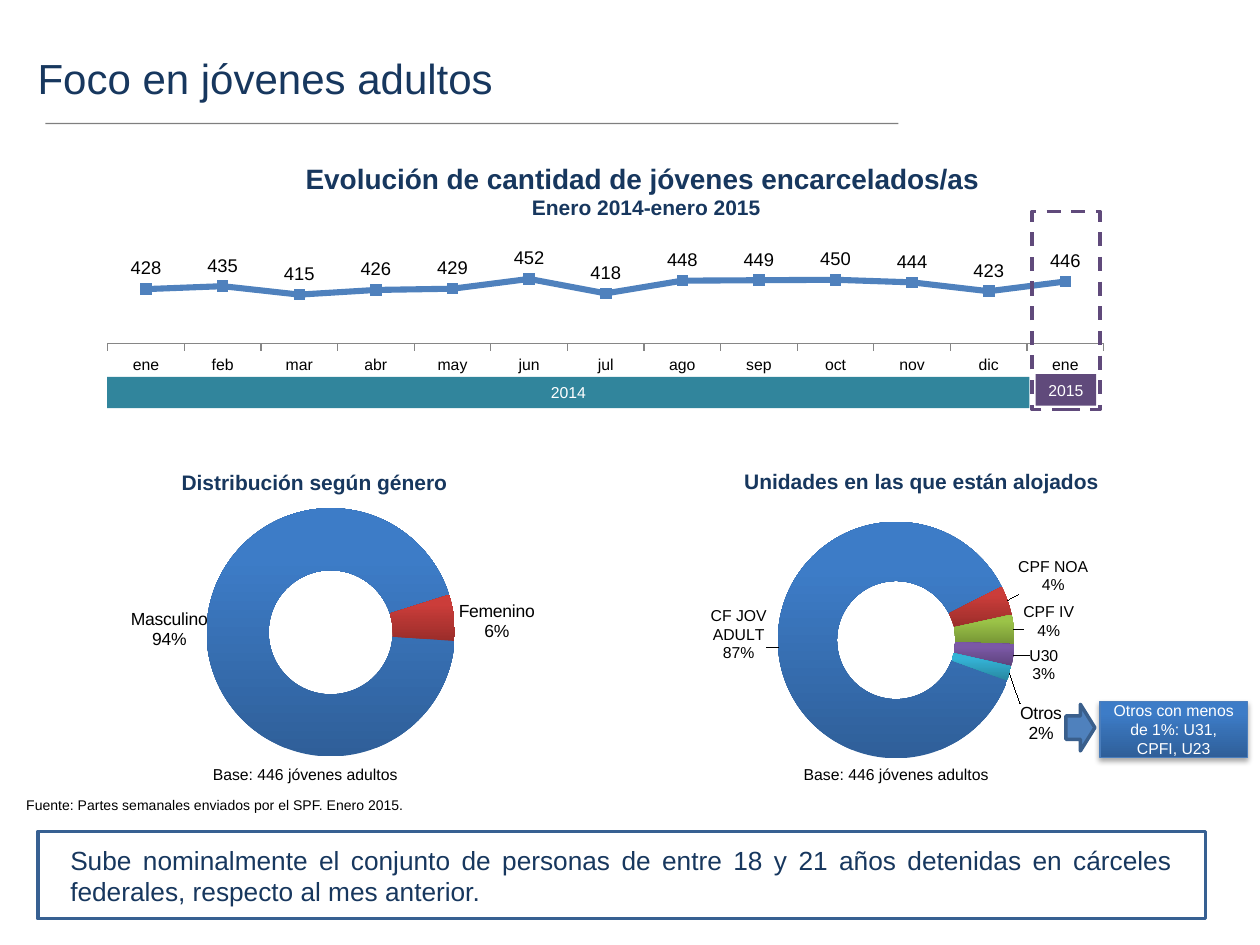
"""Build the slide on young adults in federal prisons."""
from lxml import etree
from pptx import Presentation
from pptx import util as u
from pptx.chart.data import CategoryChartData
from pptx.dml.color import RGBColor
from pptx.enum import chart as ch, dml, shapes, text
from pptx.oxml import parse_xml
from pptx.oxml.ns import nsdecls, qn

NAVY = "17375E"
BLUE = ("2F5F99", "3D7CC7")
KIND = shapes.MSO_SHAPE
ALIGN = text.PP_ALIGN


def rgb(code):
    return RGBColor.from_string(code)


def write(words, at=None, shape=None, size=9, color="000000", bold=False,
          align=ALIGN.LEFT, anchor=text.MSO_ANCHOR.TOP, wrap=True):
    box = shape or slide.shapes.add_textbox(*map(u.Inches, at))
    frame = box.text_frame
    frame.word_wrap, frame.vertical_anchor = wrap, anchor
    sizes = size if isinstance(size, tuple) else (size,)
    for i, (line, pt) in enumerate(zip(words.split("\n"), sizes)):
        para = frame.add_paragraph() if i else frame.paragraphs[0]
        para.alignment = align
        run = para.add_run()
        run.text = line
        run.font.name, run.font.size, run.font.bold = "Arial", u.Pt(pt), bold
        run.font.color.rgb = rgb(color)


prs = Presentation()
prs.slide_width, prs.slide_height = u.Inches(10), u.Inches(7.5)
slide = prs.slides.add_slide(prs.slide_layouts[6])

write("Foco en jóvenes adultos", (0.2, 0.37, 7.4, 0.62), size=24, color=NAVY)
rule = slide.shapes.add_connector(
    shapes.MSO_CONNECTOR.STRAIGHT, *map(u.Inches, (0.36, 0.98, 7.13, 0.98)))
rule.line.width = u.Pt(0.75)
rule.line.color.rgb = rgb("000000")
tint = next(rule.element.spPr.iter(qn("a:srgbClr")))
etree.SubElement(tint, qn("a:alpha")).set("val", "50000")
etree.SubElement(rule.element.spPr, qn("a:effectLst"))

rings = [("Masculino", "Femenino"), ("CF JOV ADULT", "CPF NOA", "CPF IV", "U30", "Otros")]
months = "ene feb mar abr may jun jul ago sep oct nov dic ene".split()
counts = [428, 435, 415, 426, 429, 452, 418, 448, 449, 450, 444, 423, 446]
line, ring = ch.XL_CHART_TYPE.LINE_MARKERS, ch.XL_CHART_TYPE.DOUGHNUT
charts = []
for kind, at, cats, vals, area in [
        (line, (0.6, 1.84, 8.5, 1.64), months, counts, (0.03, 0.13, 0.93, 0.41)),
        (ring, (0.8, 3.7, 3.65, 2.72), rings[0], (94, 6), (0.23, 0.12, 0.54, 0.73)),
        (ring, (5.47, 3.68, 3.65, 2.72), rings[1], (87, 4, 4, 3, 2), (0.19, 0.17, 0.52, 0.69))]:
    data = CategoryChartData()
    data.categories = cats
    data.add_series("Series 1", vals)
    chart = slide.shapes.add_chart(kind, *map(u.Inches, at), data).chart
    chart.has_legend = chart.has_title = False
    chart.font.name, chart.font.size = "Calibri", u.Pt(18)
    chart.font.color.rgb = rgb("000000")
    plot = next(chart.element.iter(qn("c:plotArea")))
    for old in plot.findall(qn("c:layout")):
        plot.remove(old)
    sides = "".join(f'<c:{k} val="{v}"/>' for k, v in zip("xywh", area))
    plot.insert(0, parse_xml(
        f'<c:layout {nsdecls("c")}><c:manualLayout><c:layoutTarget val="inner"/>'
        f'<c:xMode val="edge"/><c:yMode val="edge"/>{sides}</c:manualLayout></c:layout>'))
    charts.append(chart)

trend = charts[0]
trend.plots[0].vary_by_categories = False
axis = trend.value_axis
axis.minimum_scale, axis.maximum_scale = 300, 500
axis.has_major_gridlines = axis.visible = False
axis = trend.category_axis
axis.major_tick_mark = ch.XL_TICK_MARK.OUTSIDE
axis.tick_labels.font.name, axis.tick_labels.font.size = "Arial", u.Pt(9)
axis.format.line.color.rgb = rgb("868686")
row = trend.plots[0].series[0]
row.smooth = False
row.format.line.width = u.Pt(3.5)
row.format.line.color.rgb = rgb("4F81BD")
row.marker.style, row.marker.size = ch.XL_MARKER_STYLE.SQUARE, 6
row.marker.format.fill.solid()
row.marker.format.fill.fore_color.rgb = rgb("4F81BD")
row.marker.format.line.color.rgb = rgb("4F81BD")
tags = row.data_labels
tags.show_value, tags.position = True, ch.XL_LABEL_POSITION.ABOVE
tags.font.name, tags.font.size = "Arial", u.Pt(10.5)


def shade(fill, dark, light):
    fill.gradient()
    fill.gradient_angle = 90
    for stop, code, pos in zip(fill.gradient_stops, (dark, light), (0, 0.8)):
        stop.color.rgb, stop.position = rgb(code), pos


tones = [BLUE, ("9B2D2A", "CB3D3A"), ("769535", "9BC348"),
         ("5D437C", "7B58A6"), ("2787A0", "34B3D6")]
moves = [[(-0.15, -0.04), (0.16, 0)],
         [(-0.15, -0.03), (0.16, -0.1), (0.14, -0.03), (0.13, 0.04), (0.13, 0.17)]]
for chart, start, shifts in zip(charts[1:], (94, 110), moves):
    root = chart.element
    for name, val in (("firstSliceAng", start), ("holeSize", 50)):
        next(root.iter(qn("c:" + name))).set("val", str(val))
    for i, (x, y) in enumerate(shifts):
        point = chart.plots[0].series[0].points[i]
        shade(point.format.fill, *tones[i])
        point.format.line.fill.background()
        font = point.data_label.font
        font.name, font.size = "Arial", u.Pt(10 if len(shifts) == 2 or i == 4 else 9)
    for tag, (x, y) in zip(root.iter(qn("c:dLbl")), shifts):
        tag.insert(1, parse_xml(
            f'<c:layout {nsdecls("c")}><c:manualLayout><c:x val="{x}"/>'
            f'<c:y val="{y}"/></c:manualLayout></c:layout>'))
        for name, val in (("Val", 0), ("CatName", 1), ("Percent", 1)):
            tag.find(qn("c:show" + name)).set("val", str(val))
        etree.SubElement(tag, qn("c:separator")).text = "\n"

write("Evolución de cantidad de jóvenes encarcelados/as \nEnero 2014-enero 2015",
      (2.06, 1.23, 6.14, 0.57), size=(16, 12), color=NAVY, bold=True, align=ALIGN.CENTER)
for words, at in [("Distribución según género", (0.96, 3.68, 2.69, 0.3)),
                  ("Unidades en las que están alojados", (5.27, 3.67, 3.55, 0.3))]:
    write(words, at, size=12, color=NAVY, bold=True, align=ALIGN.RIGHT)
for x in (1.59, 6.28):
    write("Base: 446 jóvenes adultos", (x, 6.02, 1.68, 0.25), wrap=False)

parts = []
for kind, at, fill, edge, width in [
        (KIND.RECTANGLE, (0.11, 6.27, 3.25, 0.24), "FFFFFF", None, 0),
        (KIND.RECTANGLE, (0.85, 2.99, 7.32, 0.25), "31859C", None, 0),
        (KIND.RECTANGLE, (8.22, 2.97, 0.48, 0.25), "604A7B", None, 0),
        (KIND.RECTANGLE, (8.19, 1.68, 0.54, 1.57), None, "604A7B", 2),
        (KIND.RECTANGLE, (8.73, 5.57, 1.17, 0.44), BLUE, "4B7EBC", 0.75),
        (KIND.RIGHT_ARROW, (8.46, 5.59, 0.23, 0.37), "4F81BD", "3A5F8C", 2),
        (KIND.RECTANGLE, (0.3, 6.6, 9.27, 0.69), None, "376092", 2)]:
    part = slide.shapes.add_shape(kind, *map(u.Inches, at))
    part.shadow.inherit = False
    if fill is None:
        part.fill.background()
    elif fill == BLUE:
        shade(part.fill, *fill)
    else:
        part.fill.solid()
        part.fill.fore_color.rgb = rgb(fill)
    if edge:
        part.line.color.rgb, part.line.width = rgb(edge), u.Pt(width)
    else:
        part.line.fill.background()
    parts.append(part)

source, past, now, frame, note, arrow, panel = parts
frame.line.dash_style = dml.MSO_LINE.DASH
note.element.spPr.find(qn("a:effectLst")).append(parse_xml(
    f'<a:outerShdw {nsdecls("a")} blurRad="39370" dist="22860" dir="5400000" rotWithShape="0">'
    '<a:srgbClr val="000000"><a:alpha val="35000"/></a:srgbClr></a:outerShdw>'))
write("Fuente: Partes semanales enviados por el SPF. Enero 2015.",
      shape=source, size=8, wrap=False)
for shape, words, wrap in [(past, "2014", True), (now, "2015", False),
                           (note, "Otros con menos de 1%: U31, CPFI, U23", True)]:
    write(words, shape=shape, color="FFFFFF", align=ALIGN.CENTER,
          anchor=text.MSO_ANCHOR.MIDDLE, wrap=wrap)
write("Sube nominalmente el conjunto de personas de entre 18 y 21 años detenidas "
      "en cárceles federales, respecto al mes anterior. ",
      (0.46, 6.65, 8.94, 0.61), size=15, color=NAVY, align=ALIGN.JUSTIFY)

prs.save("out.pptx")
